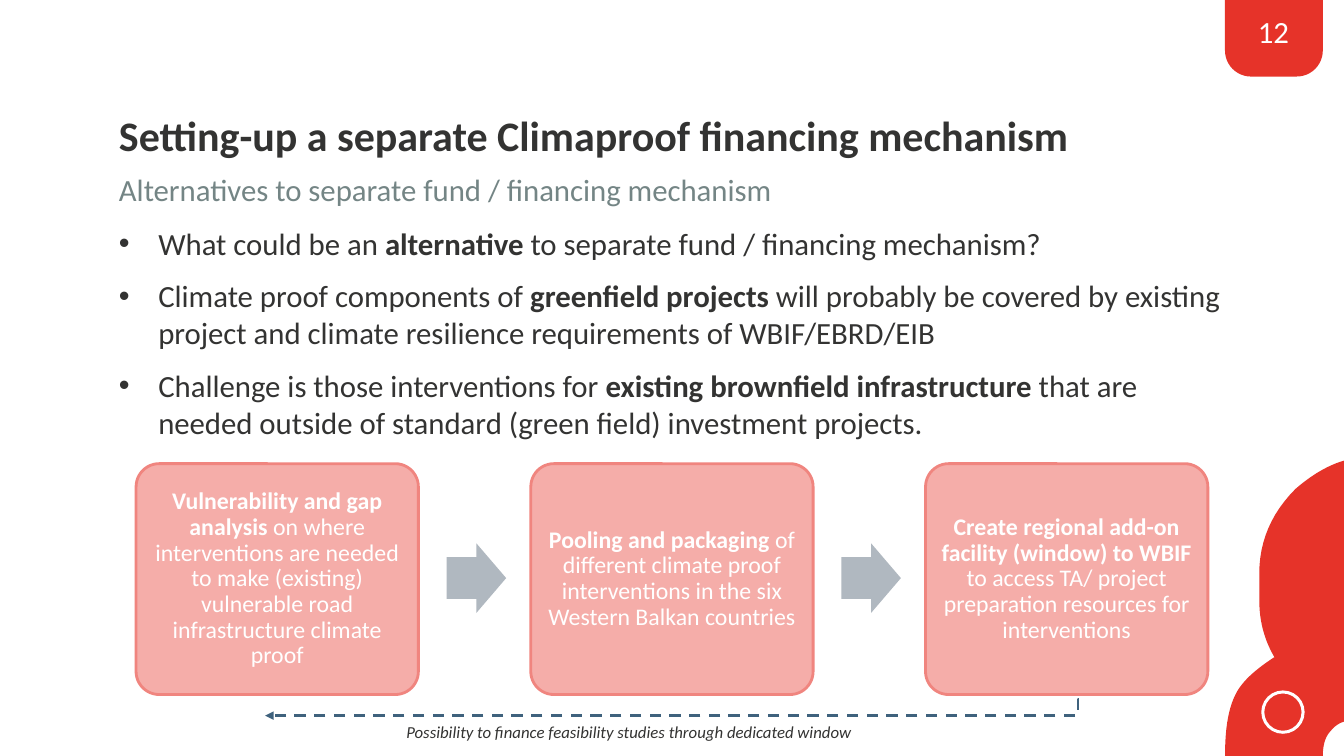
from lxml import etree
from pptx import Presentation
from pptx.dml.color import RGBColor
from pptx.enum.dml import MSO_LINE
from pptx.enum.shapes import MSO_CONNECTOR, MSO_SHAPE
from pptx.enum.text import MSO_ANCHOR, PP_ALIGN
from pptx.oxml.ns import qn
from pptx.util import Inches, Pt

RED = RGBColor(0xE6, 0x33, 0x29)
WHITE = RGBColor(0xFF, 0xFF, 0xFF)
DARK = RGBColor(0x33, 0x33, 0x32)
SAGE = RGBColor(0x74, 0x85, 0x85)
PINK = RGBColor(0xF5, 0xAD, 0xA9)
ROSE = RGBColor(0xF0, 0x85, 0x7F)
GREY = RGBColor(0xB0, 0xB8, 0xC0)
BLUE = RGBColor(0x3F, 0x62, 0x7D)
LEFT, CENTER = PP_ALIGN.LEFT, PP_ALIGN.CENTER
TOP, MIDDLE = MSO_ANCHOR.TOP, MSO_ANCHOR.MIDDLE
DASH = MSO_LINE.DASH
ELBOW = MSO_CONNECTOR.ELBOW
ROUND = MSO_SHAPE.ROUNDED_RECTANGLE
ARROW = MSO_SHAPE.RIGHT_ARROW
TAB = MSO_SHAPE.ROUND_2_SAME_RECTANGLE
RING = MSO_SHAPE.DONUT

deck = Presentation()
deck.slide_width, deck.slide_height = Inches(13.33), Inches(7.5)
slide = deck.slides.add_slide(deck.slide_layouts[5])
shapes = slide.shapes


def paint(shape, color):
    shape.shadow.inherit = False
    shape.fill.solid()
    shape.fill.fore_color.rgb = color
    shape.line.fill.background()


def write(shape, paras, size, color, align=LEFT, anchor=TOP, inset=0, bullet=False):
    frame = shape.text_frame
    frame.word_wrap = True
    frame.vertical_anchor = anchor
    frame.margin_left = frame.margin_right = Inches(inset)
    frame.margin_top = frame.margin_bottom = Inches(inset)
    for i, runs in enumerate(paras):
        para = frame.add_paragraph() if i else frame.paragraphs[0]
        para.alignment = align
        if i:
            para.space_before = Pt(11)
        if bullet:
            props = para._p.get_or_add_pPr()
            props.set("marL", str(Inches(0.39)))
            props.set("indent", str(-Inches(0.39)))
            etree.SubElement(props, qn("a:buFont"), typeface="Arial")
            etree.SubElement(props, qn("a:buChar"), char="•")
        for text, bold in runs:
            run = para.add_run()
            run.text = text
            run.font.name = "Calibri"
            run.font.size = Pt(size)
            run.font.bold = bold
            run.font.color.rgb = color


start = (13.33, 4.57)
curves = [
    [(13.16, 4.62), (13, 4.72), (12.85, 4.85)],
    [(12.61, 5.09), (12.49, 5.37), (12.49, 5.69)],
    [(12.49, 5.78), (12.49, 5.87), (12.49, 5.96)],
    [(12.49, 6.16), (12.54, 6.35), (12.64, 6.52)],
    [(12.47, 6.63), (12.34, 6.74), (12.27, 6.86)],
    [(12.19, 7), (12.15, 7.2), (12.15, 7.5)],
    [(12.5, 7.5), (12.8, 7.5), (13.12, 7.5)],
    [(13.12, 7.38), (13.15, 7.3), (13.2, 7.25)],
    [(13.24, 7.2), (13.29, 7.17), (13.33, 7.16)],
]
points = []
last = start
for one, two, end in curves:
    for step in range(1, 13):
        t = step / 12
        s = 1 - t
        points.append(tuple(
            Inches(s**3 * a + 3 * s * s * t * b + 3 * s * t * t * c + t**3 * d)
            for a, b, c, d in zip(last, one, two, end)
        ))
    last = end
pen = shapes.build_freeform(Inches(start[0]), Inches(start[1]))
pen.add_line_segments(points, close=True)
paint(pen.convert_to_shape(), RED)

ring = shapes.add_shape(RING, Inches(12.51), Inches(6.85), Inches(0.43), Inches(0.43))
ring.adjustments[0] = 0.07
paint(ring, WHITE)

tab = shapes.add_shape(TAB, Inches(12.15), Inches(0), Inches(0.97), Inches(0.76))
tab.adjustments[0] = 0
tab.adjustments[1] = 0.34
paint(tab, RED)
page = shapes.add_textbox(Inches(12.37), Inches(0.13), Inches(0.52), Inches(0.36))
write(page, [[("12", False)]], 22, WHITE, CENTER)

title = shapes.title
title.left, title.top = Inches(1.18), Inches(1.12)
title.width, title.height = Inches(10.94), Inches(0.43)
write(title, [[("Setting-up a separate Climaproof financing mechanism", True)]],
      30, DARK, anchor=MIDDLE)

sub = shapes.add_textbox(Inches(1.18), Inches(1.69), Inches(10.94), Inches(0.43))
write(sub, [[("Alternatives to separate fund / financing mechanism", False)]], 22, SAGE)

body = shapes.add_textbox(Inches(1.18), Inches(2.23), Inches(10.94), Inches(2.3))
write(body, [
    [("What could be an ", False), ("alternative ", True),
     ("to separate fund / financing mechanism?", False)],
    [("Climate proof components of ", False), ("greenfield projects ", True),
     ("will probably be covered by existing project and climate resilience "
      "requirements of WBIF/EBRD/EIB", False)],
    [("Challenge is those interventions for ", False),
     ("existing brownfield infrastructure ", True),
     ("that are needed outside of standard (green field) investment projects.", False)],
], 22, DARK, bullet=True)

stages = [
    ("Vulnerability and gap analysis ",
     "on where interventions are needed to make (existing) vulnerable road "
     "infrastructure climate proof"),
    ("Pooling and packaging ",
     "of different climate proof interventions in the six Western Balkan countries"),
    ("Create regional add-on facility (window) to WBIF ",
     "to access TA/ project preparation resources for interventions"),
]
for i, (head, rest) in enumerate(stages):
    x = 1.35 + 3.915 * i
    box = shapes.add_shape(ROUND, Inches(x), Inches(4.6), Inches(2.8), Inches(2.29))
    box.adjustments[0] = 0.1
    paint(box, PINK)
    box.line.color.rgb = ROSE
    box.line.width = Pt(2)
    write(box, [[(head, True), (rest, False)]], 17, WHITE, CENTER, MIDDLE, 0.07)
    box.text_frame.paragraphs[0].line_spacing = 0.9
    if i < len(stages) - 1:
        arrow = shapes.add_shape(
            ARROW, Inches(x + 3.08), Inches(5.39), Inches(0.59), Inches(0.69))
        arrow.adjustments[0] = 0.6
        paint(arrow, GREY)

link = shapes.add_connector(ELBOW, Inches(10.7), Inches(6.94), Inches(2.63), Inches(7.1))
link.line.color.rgb = BLUE
link.line.width = Pt(2)
link.line.dash_style = DASH
props = link._element.spPr
guides = props.find(qn("a:prstGeom")).find(qn("a:avLst"))
etree.SubElement(guides, qn("a:gd"), name="adj1", fmla="val 100")
etree.SubElement(props.find(qn("a:ln")), qn("a:tailEnd"), type="triangle")
etree.SubElement(props, qn("a:effectLst"))

note = shapes.add_textbox(Inches(4.03), Inches(7.16), Inches(4.97), Inches(0.2))
write(note, [[("Possibility to finance feasibility studies through dedicated window", False)]],
      12, DARK)
note.text_frame.paragraphs[0].runs[0].font.italic = True

deck.save("out.pptx")
